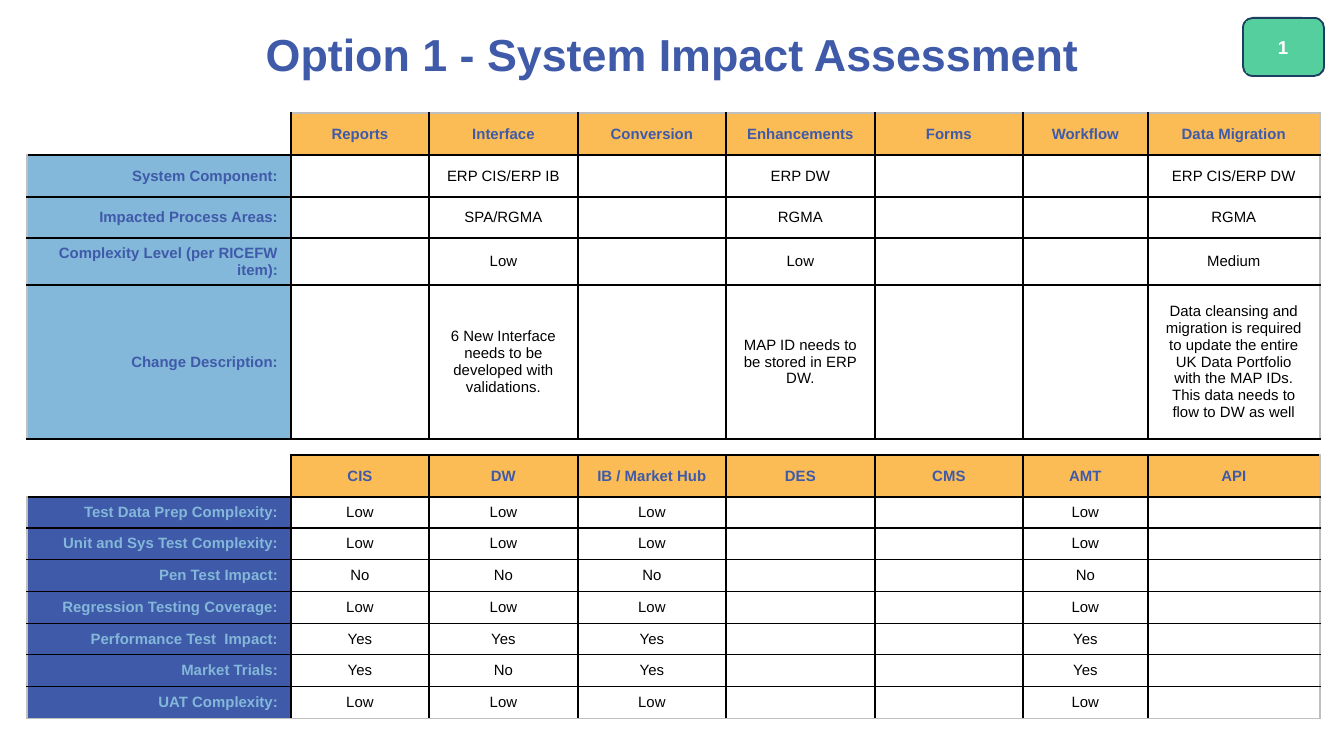
"""Build the Option 1 system impact assessment slide."""
import itertools

import pptx
import pptx.dml.color
import pptx.enum.shapes
import pptx.enum.text
import pptx.oxml.ns
import pptx.util
from lxml import etree

RGBColor = pptx.dml.color.RGBColor
BLUE = RGBColor(0x3E, 0x5A, 0xA8)
SKY = RGBColor(0x84, 0xB8, 0xDA)
AMBER = RGBColor(0xFC, 0xBC, 0x55)
GREEN = RGBColor(0x56, 0xCF, 0x9E)
NAVY = RGBColor(0x1D, 0x3E, 0x61)
BLACK = RGBColor(0, 0, 0)
GRAY = RGBColor(0xBF, 0xBF, 0xBF)
WHITE = RGBColor(0xFF, 0xFF, 0xFF)

PX = 914400 / 134.4
ALIGN = pptx.enum.text.PP_ALIGN
MIDDLE = pptx.enum.text.MSO_ANCHOR.MIDDLE
SHAPE = pptx.enum.shapes.MSO_SHAPE

COLUMN_EDGES = [27, 291, 429, 578, 726, 875, 1023, 1148, 1320]
ROW_EDGES = [113, 155, 197, 238, 285, 439, 455, 497, 528, 560, 592, 624, 655, 687, 719]
GAP_ROW = 5
HEADER_ROWS = (0, 6)

CHANGES = [
    ["", "Reports", "Interface", "Conversion", "Enhancements", "Forms", "Workflow", "Data Migration"],
    ["System Component:", "", "ERP CIS/ERP IB", "", "ERP DW", "", "", "ERP CIS/ERP DW"],
    ["Impacted Process Areas:", "", "SPA/RGMA", "", "RGMA", "", "", "RGMA"],
    ["Complexity Level (per RICEFW item):", "", "Low", "", "Low", "", "", "Medium"],
    ["Change Description:", "", "6 New Interface needs to be developed with validations.", "",
     "MAP ID needs to be stored in ERP DW.", "", "",
     "Data cleansing and migration is required to update the entire UK Data Portfolio "
     "with the MAP IDs. This data needs to flow to DW as well"],
]
SYSTEMS = ["", "CIS", "DW", "IB / Market Hub", "DES", "CMS", "AMT", "API"]
TESTS = [
    ("Test Data Prep Complexity:", "Low", "Low"),
    ("Unit and Sys Test Complexity:", "Low", "Low"),
    ("Pen Test Impact:", "No", "No"),
    ("Regression Testing Coverage:", "Low", "Low"),
    ("Performance Test  Impact:", "Yes", "Yes"),
    ("Market Trials:", "Yes", "No"),
    ("UAT Complexity:", "Low", "Low"),
]
ROWS = CHANGES + [[""] * 8, SYSTEMS]
ROWS += [[label, level, warehouse, level, "", "", level, ""] for label, level, warehouse in TESTS]
LAST_ROW, LAST_COLUMN = len(ROWS) - 1, len(SYSTEMS) - 1


def px(*lengths):
    return [pptx.util.Emu(round(length * PX)) for length in lengths]


def write(para, text, size, color, bold, align):
    para.alignment = align
    span = para.add_run()
    span.text = text
    span.font.name = "Arial"
    span.font.size = pptx.util.Pt(size)
    span.font.bold = bold
    span.font.color.rgb = color


deck = pptx.Presentation()
deck.slide_width, deck.slide_height = px(1344, 756)
page = deck.slides.add_slide(deck.slide_layouts[5])

title = page.shapes.title
title.left, title.top, title.width, title.height = px(67, 19, 1210, 69)
title.text_frame.auto_size = pptx.enum.text.MSO_AUTO_SIZE.NONE
title.text_frame.vertical_anchor = MIDDLE
write(title.text_frame.paragraphs[0], "Option 1 - System Impact Assessment", 24, BLUE, True, ALIGN.CENTER)

frame = page.shapes.add_table(len(ROWS), len(SYSTEMS), *px(27, 113, 1293, 606))
table = frame.table
table.first_row = table.horz_banding = False
for column, (left, right) in zip(table.columns, itertools.pairwise(COLUMN_EDGES)):
    column.width = px(right - left)[0]
for row, (top, bottom) in zip(table.rows, itertools.pairwise(ROW_EDGES)):
    row.height = px(bottom - top)[0]

for r, c in itertools.product(range(len(ROWS)), range(len(SYSTEMS))):
    text = ROWS[r][c]
    cell = table.cell(r, c)
    cell.vertical_anchor = MIDDLE
    cell.margin_left, cell.margin_right = px(13, 13)
    cell.margin_top = cell.margin_bottom = px(0 if r == GAP_ROW else 4)[0]

    fill, color, align = None, BLACK, ALIGN.CENTER
    if text and r in HEADER_ROWS:
        fill, color = AMBER, BLUE
    elif text and c == 0:
        fill, color = (SKY, BLUE) if r < GAP_ROW else (BLUE, SKY)
        align = ALIGN.RIGHT
    if fill is None:
        cell.fill.background()
    else:
        cell.fill.solid()
        cell.fill.fore_color.rgb = fill

    para = cell.text_frame.paragraphs[0]
    if text:
        write(para, text, 8, color, fill is not None, align)
    else:
        etree.SubElement(para._p, pptx.oxml.ns.qn("a:endParaRPr"), sz="100" if r == GAP_ROW else "800")

    edges = dict.fromkeys(["lnL", "lnR", "lnT", "lnB"], BLACK)
    if c == 0:
        edges["lnL"] = None if r in HEADER_ROWS else GRAY
    if c == LAST_COLUMN:
        edges["lnR"] = GRAY
    if r == 0:
        edges["lnT"] = GRAY if c else None
    if r == LAST_ROW:
        edges["lnB"] = GRAY
    if r == GAP_ROW:
        edges["lnL"] = edges["lnR"] = None
    if c == 0 and r == GAP_ROW:
        edges["lnB"] = None
    if c == 0 and r == GAP_ROW + 1:
        edges["lnT"] = None
    properties = cell._tc.get_or_add_tcPr()
    for place, (side, edge_color) in enumerate(edges.items()):
        line = etree.Element(pptx.oxml.ns.qn("a:" + side), w="12700")
        if edge_color is None:
            etree.SubElement(line, pptx.oxml.ns.qn("a:noFill"))
        else:
            paint = etree.SubElement(line, pptx.oxml.ns.qn("a:solidFill"))
            etree.SubElement(paint, pptx.oxml.ns.qn("a:srgbClr"), val=str(edge_color))
        properties.insert(place, line)

badge = page.shapes.add_group_shape()
outline = badge.shapes.add_shape(SHAPE.ROUNDED_RECTANGLE, *px(1243, 18, 81, 58))
number = badge.shapes.add_shape(SHAPE.RECTANGLE, *px(1246, 21, 74, 52))
for box in (outline, number):
    box.shadow.inherit = False
    box.fill.solid()
    box.fill.fore_color.rgb = GREEN
outline.line.color.rgb = NAVY
outline.line.width = pptx.util.Pt(1)
number.line.fill.background()
number.text_frame.vertical_anchor = MIDDLE
write(number.text_frame.paragraphs[0], "1", 10, WHITE, True, ALIGN.CENTER)

deck.save("out.pptx")
